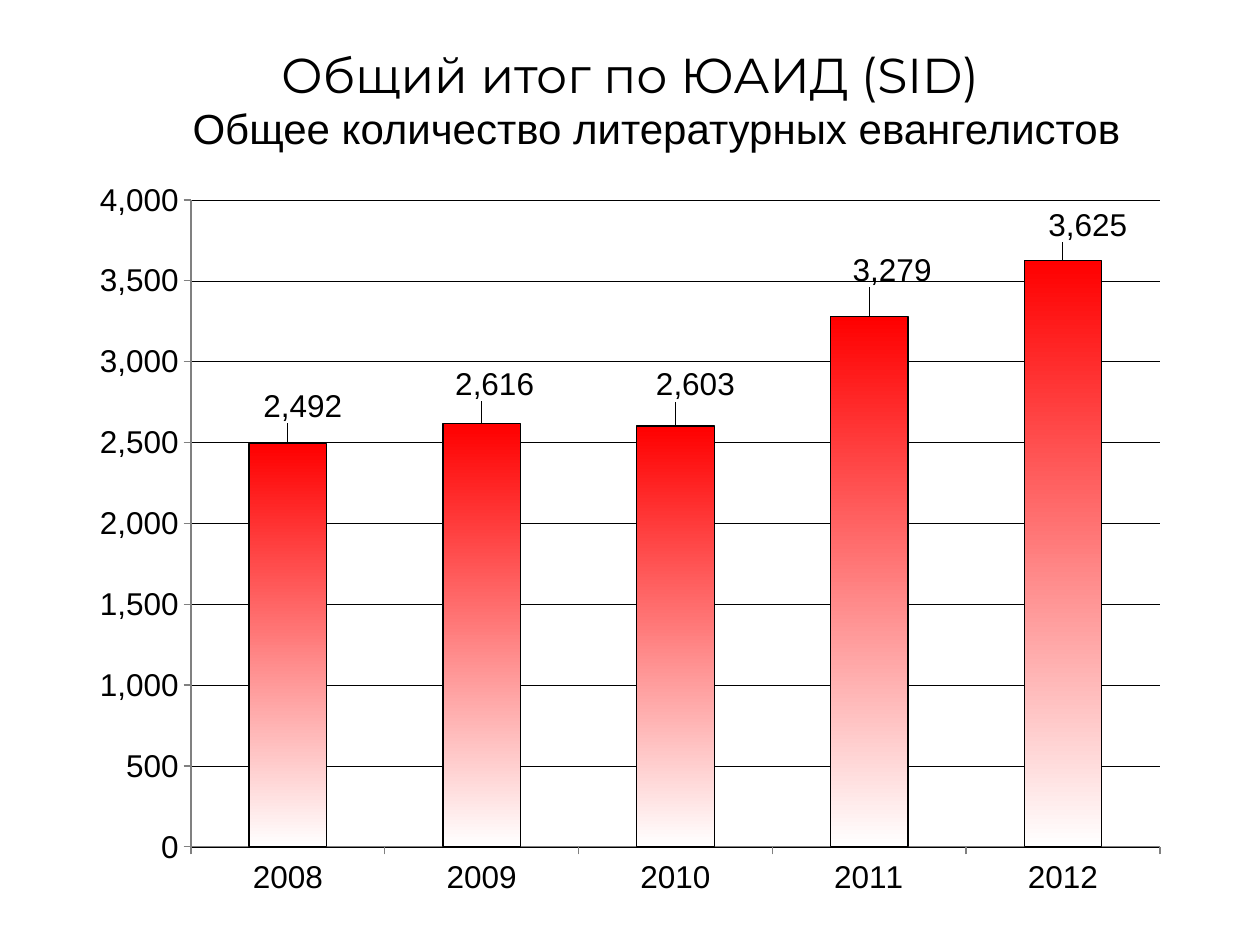
"""Build a slide charting the yearly number of literature evangelists."""
from dataclasses import dataclass

from lxml import etree
from pptx import Presentation
from pptx import util as u
from pptx.chart.data import CategoryChartData
from pptx.dml.color import RGBColor
from pptx.enum import chart as charts, text
from pptx.oxml.ns import qn

TITLE = "Общий итог по ЮАИД (SID)"
SUBTITLE = "Общее количество литературных евангелистов"
YEARS = ["2008", "2009", "2010", "2011", "2012"]
EVANGELISTS = [2492, 2616, 2603, 3279, 3625]
LABEL_SHIFTS = [(15, -15), (13, -17), (20, -19), (23, -24), (25, -13)]

TITLE_BOX = (63, 38, 1134, 157)
SUBTITLE_BOX = (179, 96, 955, 63)
CHART_BOX = (78, 168, 1104, 741)
PLOT_BOX = (191, 200, 969, 647)
PX = u.Inches(1) // 126
NUMBER_FORMAT = "#,##0"


@dataclass(frozen=True)
class Theme:
    ink: RGBColor = RGBColor(0, 0, 0)
    axis: RGBColor = RGBColor(0x80, 0x80, 0x80)
    bar_top: RGBColor = RGBColor(0xFF, 0, 0)
    bar_bottom: RGBColor = RGBColor(0xFF, 0xFF, 0xFF)
    title_font: str = "Montserrat"
    body_font: str = "Arial"
    title_size: int = 28
    subtitle_size: int = 24
    chart_size: int = 18


THEME = Theme()


def scale(box):
    return [value * PX for value in box]


def style_font(font, name, size):
    font.name, font.size = name, u.Pt(size)
    font.color.rgb = THEME.ink


def add_heading(page, box, words, font_name, size):
    frame = page.shapes.add_textbox(*scale(box)).text_frame
    frame.word_wrap = True
    frame.vertical_anchor = text.MSO_ANCHOR.TOP
    frame.text = words
    para = frame.paragraphs[0]
    para.alignment = text.PP_ALIGN.CENTER
    style_font(para.runs[0].font, font_name, size)


def set_layout(parent, index, **settings):
    for old in parent.findall(qn("c:layout")):
        parent.remove(old)
    layout = etree.Element(qn("c:layout"))
    manual = etree.SubElement(layout, qn("c:manualLayout"))
    for name, value in settings.items():
        shown = value if isinstance(value, str) else f"{value:.4f}"
        etree.SubElement(manual, qn(f"c:{name}")).set("val", shown)
    parent.insert(index, layout)


def style_axes(chart):
    for axis in (chart.category_axis, chart.value_axis):
        axis.major_tick_mark = charts.XL_TICK_MARK.OUTSIDE
        axis.format.line.color.rgb = THEME.axis
        axis.format.line.width = u.Pt(0.75)
        style_font(axis.tick_labels.font, THEME.body_font, THEME.chart_size)
    values = chart.value_axis
    values.minimum_scale, values.maximum_scale, values.major_unit = 0, 4000, 500
    values.tick_labels.number_format = NUMBER_FORMAT
    values.tick_labels.number_format_is_linked = False
    values.major_gridlines.format.line.color.rgb = THEME.ink
    values.major_gridlines.format.line.width = u.Pt(0.25)


def style_bars(plot):
    plot.gap_width = 150
    plot.vary_by_categories = False
    series = plot.series[0]
    series.format.fill.gradient()
    series.format.fill.gradient_angle = 270
    for stop, color in zip(series.format.fill.gradient_stops, (THEME.bar_top, THEME.bar_bottom)):
        stop.color.rgb = color
    series.format.line.color.rgb = THEME.ink
    series.format.line.width = u.Pt(0.75)
    return series


def add_labels(series):
    labels = series.data_labels
    labels.show_value = True
    labels.number_format = NUMBER_FORMAT
    labels.number_format_is_linked = False
    labels.position = charts.XL_LABEL_POSITION.OUTSIDE_END
    style_font(labels.font, THEME.body_font, THEME.chart_size)
    for index, (right, down) in enumerate(LABEL_SHIFTS):
        label = series.points[index].data_label
        style_font(label.font, THEME.body_font, THEME.chart_size)
        label.position = charts.XL_LABEL_POSITION.OUTSIDE_END
        element = labels._element.find(f"{qn('c:dLbl')}[{index + 1}]")
        set_layout(element, 1, x=right / CHART_BOX[2], y=down / CHART_BOX[3])


def add_evangelist_chart(page):
    data = CategoryChartData(number_format=NUMBER_FORMAT)
    data.categories = YEARS
    data.add_series("Series 1", EVANGELISTS)
    kind = charts.XL_CHART_TYPE.COLUMN_CLUSTERED
    chart = page.shapes.add_chart(kind, *scale(CHART_BOX), data).chart
    chart.has_legend = False
    chart.has_title = False
    style_font(chart.font, THEME.body_font, THEME.chart_size)
    style_axes(chart)
    add_labels(style_bars(chart.plots[0]))
    left, top, width, height = CHART_BOX
    plot_left, plot_top, plot_width, plot_height = PLOT_BOX
    set_layout(
        chart._chartSpace.chart.plotArea, 0,
        layoutTarget="inner", xMode="edge", yMode="edge",
        x=(plot_left - left) / width, y=(plot_top - top) / height,
        w=plot_width / width, h=plot_height / height,
    )


def main():
    deck = Presentation()
    deck.slide_width, deck.slide_height = scale((1260, 945))
    page = deck.slides.add_slide(deck.slide_layouts[6])
    add_evangelist_chart(page)
    add_heading(page, TITLE_BOX, TITLE, THEME.title_font, THEME.title_size)
    add_heading(page, SUBTITLE_BOX, SUBTITLE, THEME.body_font, THEME.subtitle_size)
    deck.save("out.pptx")


if __name__ == "__main__":
    main()
